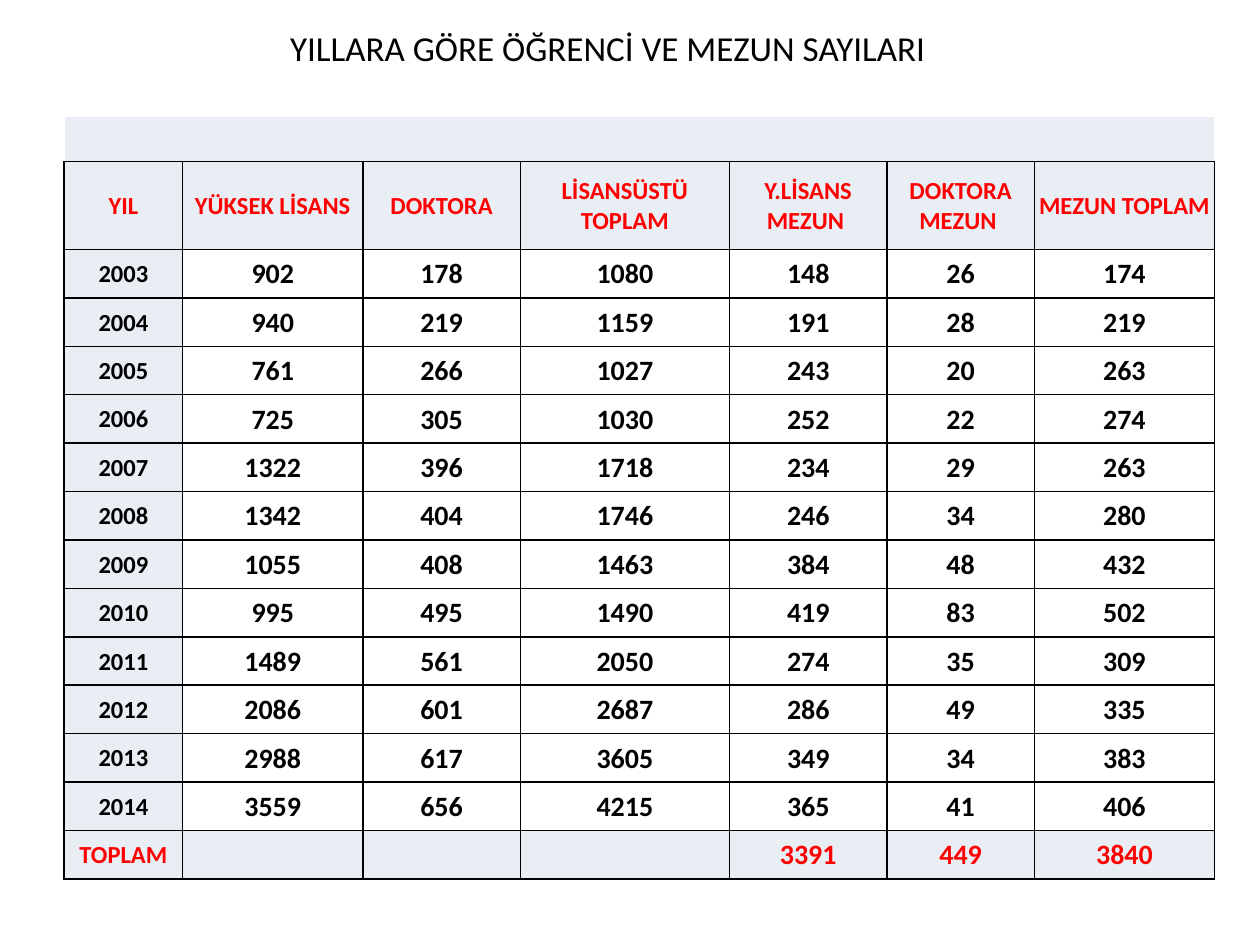
from dataclasses import dataclass

from lxml.etree import SubElement
from pptx import Presentation
from pptx.dml.color import RGBColor
from pptx.enum.text import MSO_ANCHOR as Anchor, PP_ALIGN as Align
from pptx.oxml.ns import qn
from pptx.util import Inches, Pt


@dataclass(frozen=True)
class Theme:
    font: str = "Calibri"
    ink: str = "000000"
    accent: str = "FF0000"
    band: str = "E9EDF4"
    paper: str = "FFFFFF"
    title_size: int = 20
    label_size: int = 14
    value_size: int = 16
    border_width: int = 1


TITLE = "YILLARA GÖRE ÖĞRENCİ VE MEZUN SAYILARI"
HEADINGS = ["YIL", "YÜKSEK LİSANS", "DOKTORA", "LİSANSÜSTÜ TOPLAM",
            "Y.LİSANS MEZUN ", "DOKTORA MEZUN ", "MEZUN TOPLAM"]
YEARS = [
    [2003, 902, 178, 1080, 148, 26, 174],
    [2004, 940, 219, 1159, 191, 28, 219],
    [2005, 761, 266, 1027, 243, 20, 263],
    [2006, 725, 305, 1030, 252, 22, 274],
    [2007, 1322, 396, 1718, 234, 29, 263],
    [2008, 1342, 404, 1746, 246, 34, 280],
    [2009, 1055, 408, 1463, 384, 48, 432],
    [2010, 995, 495, 1490, 419, 83, 502],
    [2011, 1489, 561, 2050, 274, 35, 309],
    [2012, 2086, 601, 2687, 286, 49, 335],
    [2013, 2988, 617, 3605, 349, 34, 383],
    [2014, 3559, 656, 4215, 365, 41, 406],
]
TOTALS = ["TOPLAM", "", "", "", 3391, 449, 3840]

COLUMN_WIDTHS = [0.94, 1.43, 1.25, 1.66, 1.25, 1.17, 1.43]
BANNER_HEIGHT, HEADING_HEIGHT, TABLE_HEIGHT = 0.36, 0.7, 6.06


class SlideBuilder:
    def __init__(self, page, theme):
        self.page = page
        self.theme = theme

    def format_text(self, frame, size, color, bold=False):
        for para in frame.paragraphs:
            para.alignment = Align.CENTER
            for span in para.runs:
                span.font.name = self.theme.font
                span.font.size = Pt(size)
                span.font.bold = bold
                span.font.color.rgb = RGBColor.from_string(color)

    def title(self, text, left, top, width, height):
        box = self.page.shapes.add_textbox(
            Inches(left), Inches(top), Inches(width), Inches(height))
        frame = box.text_frame
        frame.word_wrap = False
        frame.vertical_anchor = Anchor.MIDDLE
        frame.text = text
        self.format_text(frame, self.theme.title_size, self.theme.ink)

    def borders(self, cell, **colors):
        """Draw the four cell edges; colors overrides single edges (L, R, T, B)."""
        properties = cell._tc.get_or_add_tcPr()
        for edge in "LRTB":
            line = SubElement(properties, qn(f"a:ln{edge}"),
                              w=str(Pt(self.theme.border_width)))
            fill = SubElement(line, qn("a:solidFill"))
            SubElement(fill, qn("a:srgbClr"), val=colors.get(edge, self.theme.ink))

    def cell(self, cell, value, size, color, shaded):
        cell.margin_left = cell.margin_right = cell.margin_top = Inches(0.01)
        cell.margin_bottom = 0
        cell.vertical_anchor = Anchor.MIDDLE
        cell.text = str(value)
        self.format_text(cell.text_frame, size, color, bold=True)
        if shaded:
            cell.fill.solid()
            cell.fill.fore_color.rgb = RGBColor.from_string(self.theme.band)
        else:
            cell.fill.background()

    def table(self, left, top, rows):
        """Build the table: an empty merged banner, headings, years and totals."""
        theme = self.theme
        last = len(rows)
        frame = self.page.shapes.add_table(
            last + 1, len(COLUMN_WIDTHS), Inches(left), Inches(top),
            Inches(sum(COLUMN_WIDTHS)), Inches(TABLE_HEIGHT))
        table = frame.table
        table.first_row = table.horz_banding = False
        for column, width in zip(table.columns, COLUMN_WIDTHS):
            column.width = Inches(width)
        body_height = (TABLE_HEIGHT - BANNER_HEIGHT - HEADING_HEIGHT) / (last - 1)
        heights = [BANNER_HEIGHT, HEADING_HEIGHT] + [body_height] * (last - 1)
        for row, height in zip(table.rows, heights):
            row.height = Inches(height)

        for cell in table.rows[0].cells:
            self.borders(cell, L=theme.paper, R=theme.paper, T=theme.paper)
            self.cell(cell, "", theme.label_size, theme.ink, shaded=True)
        table.cell(0, 0).merge(table.cell(0, len(COLUMN_WIDTHS) - 1))

        for r, values in enumerate(rows, start=1):
            edge_row = r in (1, last)
            for c, value in enumerate(values):
                label = r == 1 or c == 0
                cell = table.cell(r, c)
                self.borders(cell)
                self.cell(cell, value,
                          theme.label_size if label else theme.value_size,
                          theme.accent if edge_row else theme.ink,
                          shaded=edge_row or c == 0)


def main():
    deck = Presentation()
    deck.slide_width, deck.slide_height = Inches(10), Inches(7.5)
    page = deck.slides.add_slide(deck.slide_layouts[6])
    builder = SlideBuilder(page, Theme())
    builder.title(TITLE, 2.18, 0.16, 5.29, 0.44)
    builder.table(0.51, 0.92, [HEADINGS, *YEARS, TOTALS])
    deck.save("out.pptx")


if __name__ == "__main__":
    main()
